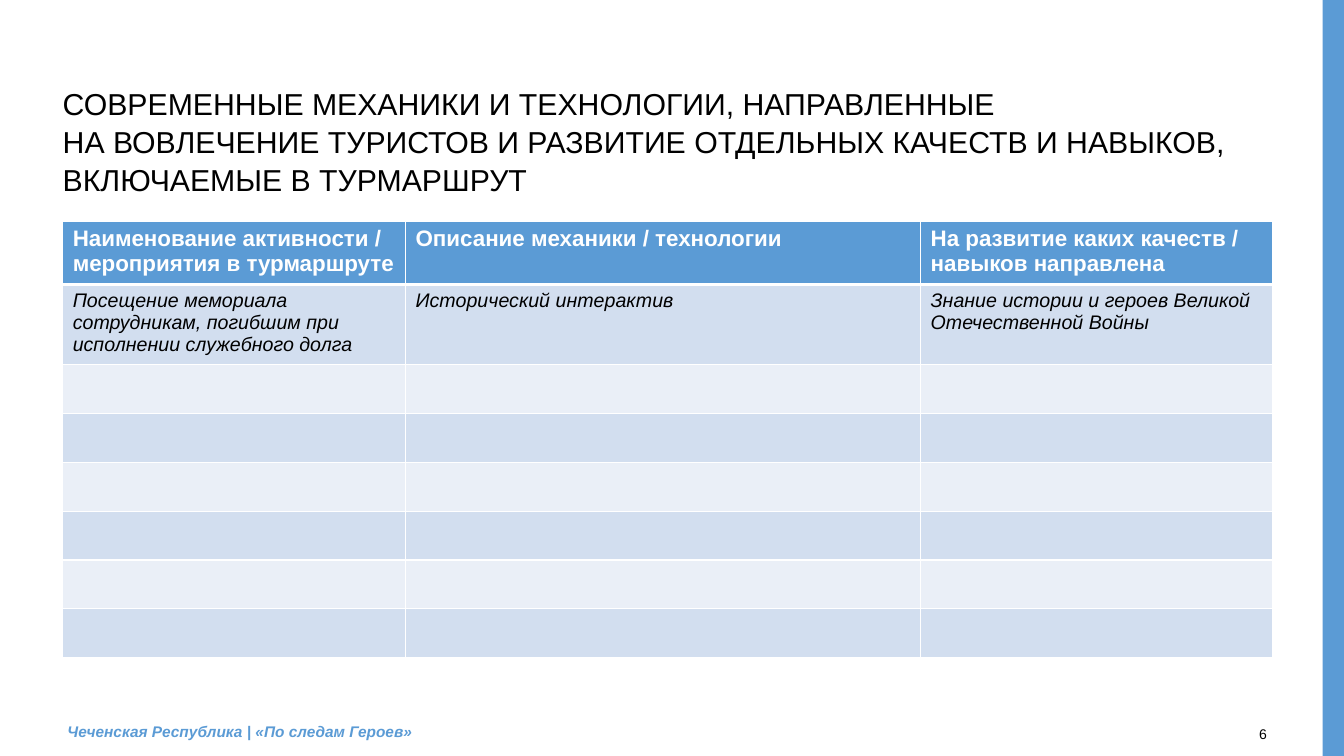
from pptx import Presentation
from pptx.dml.color import RGBColor
from pptx.enum.shapes import MSO_SHAPE
from pptx.enum.text import MSO_ANCHOR, MSO_AUTO_SIZE, PP_ALIGN
from pptx.oxml import parse_xml
from pptx.oxml.ns import nsdecls
from pptx.util import Cm, Pt

BLUE, WHITE, BLACK = "5B9BD5", "FFFFFF", "000000"
BANDS = ["D2DEEF", "EAEFF7"]


def color(code):
    return RGBColor.from_string(code)


class Page:
    font = "Arial"

    def __init__(self, deck):
        self.slide = deck.slides.add_slide(deck.slide_layouts[5])
        self.shapes = self.slide.shapes

    def style(self, frame, size, ink, bold=False, slant=False):
        for para in frame.paragraphs:
            for run in para.runs:
                font = run.font
                font.name, font.size = self.font, Pt(size)
                font.bold, font.italic = bold, slant
                font.color.rgb = color(ink)

    def place(self, shape, box, text, inset, space, anchor):
        shape.left, shape.top, shape.width, shape.height = map(Cm, box)
        frame = shape.text_frame
        frame.text = text
        frame.word_wrap = True
        frame.auto_size = MSO_AUTO_SIZE.NONE
        frame.vertical_anchor = anchor
        frame.margin_left = frame.margin_right = Cm(inset)
        frame.margin_top = frame.margin_bottom = Cm(inset)
        for para in frame.paragraphs:
            para.alignment = PP_ALIGN.LEFT
            para.line_spacing = space
        return frame

    def title(self, box, text, size):
        frame = self.place(self.shapes.title, box, text, 0.08, 1.05,
                           MSO_ANCHOR.MIDDLE)
        self.style(frame, size, BLACK)

    def text(self, box, text, size, ink, inset=0.0, space=1.0, **look):
        shape = self.shapes.add_textbox(*map(Cm, box))
        frame = self.place(shape, box, text, inset, space, MSO_ANCHOR.TOP)
        self.style(frame, size, ink, **look)

    def bar(self, box, fill):
        shape = self.shapes.add_shape(MSO_SHAPE.RECTANGLE, *map(Cm, box))
        shape.shadow.inherit = False
        shape.fill.solid()
        shape.fill.fore_color.rgb = color(fill)
        shape.line.fill.background()

    def border(self, cell, side, width):
        cell._tc.get_or_add_tcPr().append(parse_xml(
            f'<a:ln{side} {nsdecls("a")} w="{Pt(width)}"><a:solidFill>'
            f'<a:srgbClr val="{WHITE}"/></a:solidFill></a:ln{side}>'))

    def cell(self, cell, fill, widths):
        for side, width in zip("LRTB", widths):
            self.border(cell, side, width)
        cell.fill.solid()
        cell.fill.fore_color.rgb = color(fill)

    def table(self, left, top, cols, rows, texts):
        table = self.shapes.add_table(
            len(rows), len(cols), Cm(left), Cm(top),
            Cm(sum(cols)), Cm(sum(rows))).table
        for col, width in zip(table.columns, cols):
            col.width = Cm(width)
        for r, height in enumerate(rows):
            table.rows[r].height = Cm(height)
            head = r == 0
            fill = BLUE if head else BANDS[(r - 1) % 2]
            widths = (1, 1, 3 if r == 1 else 1, 3 if head else 1)
            for c in range(len(cols)):
                cell = table.cell(r, c)
                self.cell(cell, fill, widths)
                if r < len(texts):
                    cell.text_frame.text = texts[r][c]
                    self.style(cell.text_frame, 16 if head else 14,
                               WHITE if head else BLACK, head, not head)


def main():
    deck = Presentation()
    deck.slide_width, deck.slide_height = Cm(33.87), Cm(19.05)
    page = Page(deck)
    page.bar((33.33, 0, 0.54, 19.05), BLUE)
    page.text((31.73, 18.08, 0.36, 0.64), "6", 10, BLACK, space=1.5)
    page.title(
        (1.5, 1.98, 30.15, 3.1),
        "СОВРЕМЕННЫЕ МЕХАНИКИ И ТЕХНОЛОГИИ, НАПРАВЛЕННЫЕ\v"
        "НА ВОВЛЕЧЕНИЕ ТУРИСТОВ И РАЗВИТИЕ ОТДЕЛЬНЫХ КАЧЕСТВ И НАВЫКОВ,\v"
        "ВКЛЮЧАЕМЫЕ В ТУРМАРШРУТ", 21.6)
    page.text((1.57, 18.06, 20.19, 0.74),
              "Чеченская Республика | «По следам Героев»",
              11, BLUE, inset=0.13, bold=True, slant=True)
    page.table(1.58, 5.57, [8.64, 12.98, 8.87], [1.6, 2.02] + [1.23] * 6, [
        ["Наименование активности / мероприятия в турмаршруте",
         "Описание механики / технологии",
         "На развитие каких качеств / навыков направлена"],
        ["Посещение мемориала сотрудникам, погибшим при исполнении "
         "служебного долга",
         "Исторический интерактив",
         "Знание истории и героев Великой Отечественной Войны"]])
    deck.save("out.pptx")


if __name__ == "__main__":
    main()
